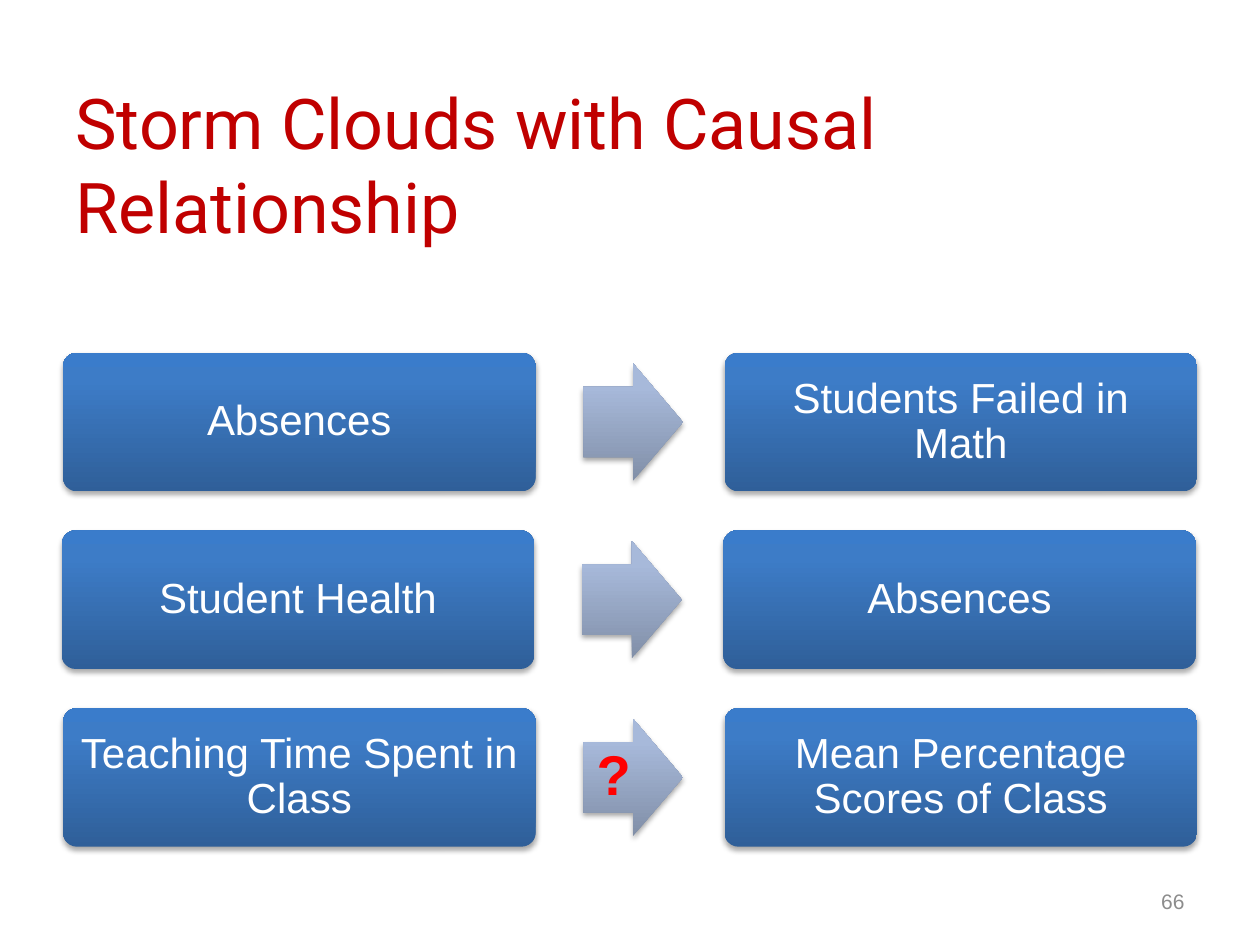
"""Build a slide of three cause-and-effect rows joined by block arrows."""
import copy

import pptx
import pptx.dml.color
import pptx.enum.shapes
import pptx.enum.text
import pptx.oxml
import pptx.oxml.ns
import pptx.util

Inches = pptx.util.Inches
Pt = pptx.util.Pt
RGBColor = pptx.dml.color.RGBColor
PP_ALIGN = pptx.enum.text.PP_ALIGN
MSO_ANCHOR = pptx.enum.text.MSO_ANCHOR
MSO_SHAPE = pptx.enum.shapes.MSO_SHAPE
qn = pptx.oxml.ns.qn

DARK_RED = RGBColor(0xC0, 0x00, 0x00)
RED = RGBColor(0xFF, 0x00, 0x00)
WHITE = RGBColor(0xFF, 0xFF, 0xFF)
GREY = RGBColor(0x8C, 0x8C, 0x8C)
BOX_STOPS = (
    (0, RGBColor(0x2F, 0x5F, 0x99)),
    (0.8, RGBColor(0x3D, 0x7C, 0xC7)),
    (1, RGBColor(0x3A, 0x7C, 0xCB)),
)
ARROW_STOPS = (
    (0, RGBColor(0x81, 0x8F, 0xA8)),
    (0.8, RGBColor(0xA7, 0xB9, 0xDA)),
    (1, RGBColor(0xA7, 0xBA, 0xDC)),
)

TITLE_FONT = {"name": "Roboto", "size": Pt(40), "color": DARK_RED}
BOX_FONT = {"name": "Arial", "size": Pt(24), "color": WHITE}
MARK_FONT = {"name": "Arial", "size": Pt(32), "color": RED, "bold": True}
NUMBER_FONT = {"name": "Arial", "size": Pt(12), "color": GREY}

SHADOW = (
    '<a:outerShdw xmlns:a="http://schemas.openxmlformats.org/drawingml/2006/main" '
    'blurRad="40000" dist="23000" dir="5400000" rotWithShape="0">'
    '<a:srgbClr val="000000"><a:alpha val="35000"/></a:srgbClr></a:outerShdw>'
)


class CausalSlide:
    """Holds the style and the current slide, and draws each kind of element."""

    box_size = (3.75, 1.1)
    arrow_size = (0.79, 0.93)

    def __init__(self, slide):
        self.slide = slide

    def fill_text(self, frame, text, font, align, insets, spacing=None):
        frame.word_wrap = True
        frame.vertical_anchor = MSO_ANCHOR.MIDDLE
        for side, inset in zip(("left", "top", "right", "bottom"), insets):
            setattr(frame, f"margin_{side}", Inches(inset))
        paragraph = frame.paragraphs[0]
        paragraph.alignment = align
        paragraph.line_spacing = spacing
        run = paragraph.add_run()
        run.text = text
        for attribute, value in font.items():
            if attribute == "color":
                run.font.color.rgb = value
            else:
                setattr(run.font, attribute, value)

    def label(self, text, left, top, width, height, font, align):
        caption = self.slide.shapes.add_textbox(
            Inches(left), Inches(top), Inches(width), Inches(height)
        )
        self.fill_text(caption.text_frame, text, font, align, (0.1, 0.05, 0.1, 0.05))

    def raised(self, preset, left, top, size, adjustments, stops):
        block = self.slide.shapes.add_shape(
            preset, Inches(left), Inches(top), *map(Inches, size)
        )
        for index, value in enumerate(adjustments):
            block.adjustments[index] = value
        block.fill.gradient()
        block.fill.gradient_angle = 90
        properties = block._element.spPr
        stop_list = properties.find(f".//{qn('a:gsLst')}")
        stop_list.append(copy.deepcopy(stop_list[-1]))
        for stop, (position, color) in zip(block.fill.gradient_stops, stops):
            stop.position = position
            stop.color.rgb = color
        block.line.fill.background()
        block.shadow.inherit = False
        properties.find(qn("a:effectLst")).append(pptx.oxml.parse_xml(SHADOW))
        return block

    def box(self, text, left, top):
        block = self.raised(
            MSO_SHAPE.ROUNDED_RECTANGLE, left, top, self.box_size, (0.1,), BOX_STOPS
        )
        self.fill_text(
            block.text_frame, text, BOX_FONT, PP_ALIGN.CENTER, (0.1,) * 4, 0.9
        )

    def arrow(self, mark, left, top):
        block = self.raised(
            MSO_SHAPE.RIGHT_ARROW, left, top, self.arrow_size, (0.6, 0.5), ARROW_STOPS
        )
        if mark:
            insets = (0, 0, 0.07, 0)
            self.fill_text(
                block.text_frame, mark, MARK_FONT, PP_ALIGN.CENTER, insets, 0.9
            )

    def causal_row(self, cause, mark, effect, left, top):
        self.box(cause, left, top)
        arrow_drop = (self.box_size[1] - self.arrow_size[1]) / 2
        self.arrow(mark, left + 4.13, top + arrow_drop)
        self.box(effect, left + 5.25, top)


def main():
    presentation = pptx.Presentation()
    presentation.slide_width = Inches(10)
    presentation.slide_height = Inches(7.5)
    causal = CausalSlide(presentation.slides.add_slide(presentation.slide_layouts[6]))

    causal.label("Storm Clouds with Causal Relationship",
                 0.5, 0.67, 7.58, 1.25, TITLE_FONT, PP_ALIGN.LEFT)
    relationships = (
        ("Absences", "", "Students Failed in Math", 0.5),
        ("Student Health", "", "Absences", 0.49),
        ("Teaching Time Spent in Class", "?", "Mean Percentage Scores of Class", 0.5),
    )
    for row, (cause, mark, effect, left) in enumerate(relationships):
        causal.causal_row(cause, mark, effect, left, 2.8 + 1.41 * row)
    causal.label("66", 7.17, 6.95, 2.33, 0.4, NUMBER_FONT, PP_ALIGN.RIGHT)

    presentation.save("out.pptx")


if __name__ == "__main__":
    main()
